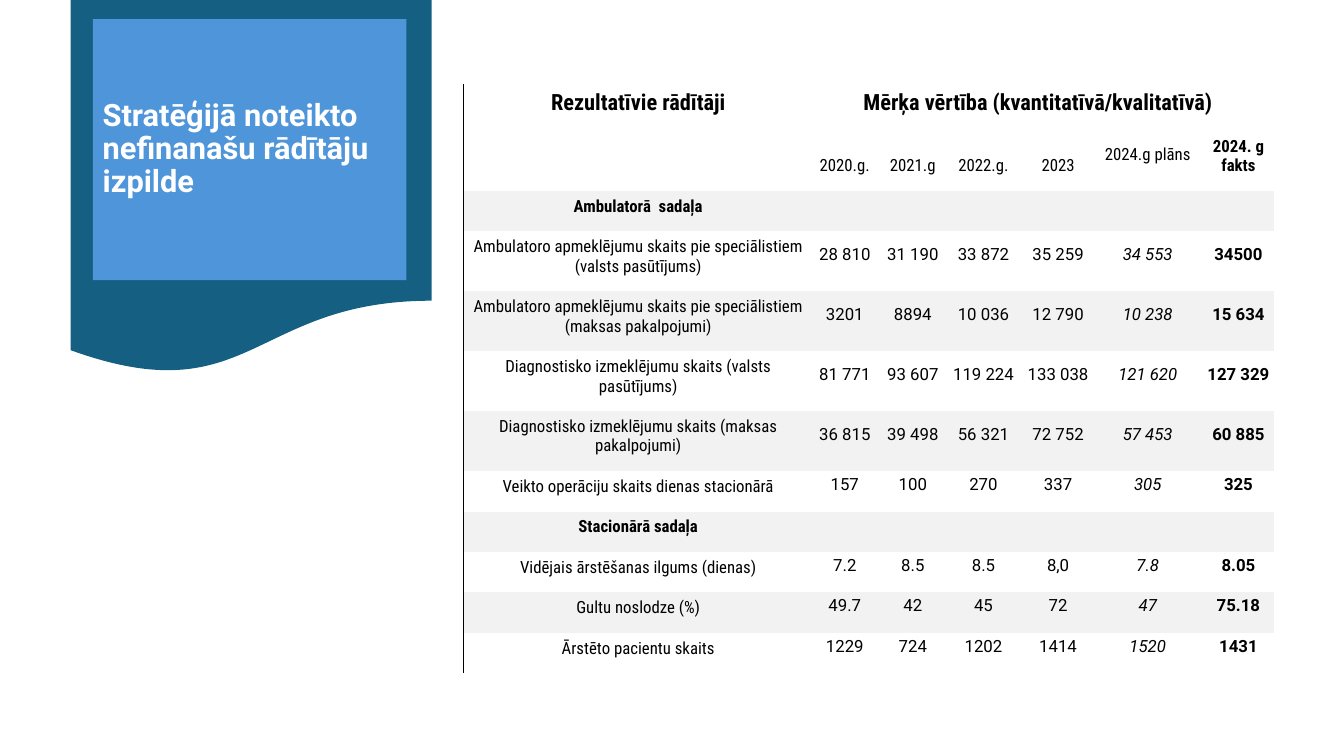
from lxml.etree import SubElement
from pptx import Presentation
from pptx.dml.color import RGBColor as RGB
from pptx.enum.shapes import MSO_SHAPE as SHAPE
from pptx.enum.text import MSO_ANCHOR as ANCHOR, PP_ALIGN as ALIGN
from pptx.oxml import parse_xml
from pptx.oxml.ns import nsdecls, qn
from pptx.util import Cm, Pt

COLORS = {"navy": "156082", "blue": "4E95D9", "band": "F2F2F2",
          "text": "000000", "white": "FFFFFF"}
BODY, NARROW = "Roboto", "Roboto Condensed"
NO_STYLE = "{2D5ABB26-0587-4C30-8999-92F81FD0307C}"
COLUMNS = [8.66, 1.75, 1.68, 1.88, 1.88, 2.64, 1.93]
SHORT, TALL = 1.02, 1.51
HEIGHTS = [1.19, TALL, SHORT] + [TALL] * 4 + [SHORT] * 5
PLAN, FACT = 5, 6
ROWS = [
    ["Rezultatīvie rādītāji", "Mērķa vērtība (kvantitatīvā/kvalitatīvā)"],
    ["", "2020.g.", "2021.g", "2022.g.", "2023", "2024.g plāns", "2024. g fakts"],
    ["Ambulatorā  sadaļa"],
    ["Ambulatoro apmeklējumu skaits pie speciālistiem (valsts pasūtījums)",
     "28 810", "31 190", "33 872", "35 259", "34 553", "34500"],
    ["Ambulatoro apmeklējumu skaits pie speciālistiem (maksas pakalpojumi)",
     "3201", "8894", "10 036", "12 790", "10 238", "15 634"],
    ["Diagnostisko izmeklējumu skaits (valsts pasūtījums)",
     "81 771", "93 607", "119 224", "133 038", "121 620", "127 329"],
    ["Diagnostisko izmeklējumu skaits (maksas pakalpojumi)",
     "36 815", "39 498", "56 321", "72 752", "57 453", "60 885"],
    ["Veikto operāciju skaits dienas stacionārā",
     "157", "100", "270", "337", "305", "325"],
    ["Stacionārā sadaļa"],
    ["Vidējais ārstēšanas ilgums (dienas)", "7.2", "8.5", "8.5", "8,0", "7.8", "8.05"],
    ["Gultu noslodze (%)", "49.7", "42", "45", "72", "47", "75.18"],
    ["Ārstēto pacientu skaits", "1229", "724", "1202", "1414", "1520", "1431"],
]


class SlideBuilder:
    """Draws styled shapes and tables on the current slide."""

    def __init__(self, slide):
        self.slide = slide

    def color(self, name):
        return RGB.from_string(COLORS[name])

    def style(self, p, size, font, color, bold=False, italic=False):
        for r in p.runs:
            f = r.font
            f.size, f.name, f.bold, f.italic = Pt(size), font, bold, italic
            f.color.rgb = self.color(color)

    def shape(self, kind, box, fill):
        sp = self.slide.shapes.add_shape(kind, *map(Cm, box))
        sp.shadow.inherit = False
        sp.fill.solid()
        sp.fill.fore_color.rgb = self.color(fill)
        sp.line.fill.background()
        return sp

    def title(self, text, box, fill):
        tf = self.shape(SHAPE.RECTANGLE, box, fill).text_frame
        tf.word_wrap = True
        tf.vertical_anchor = ANCHOR.MIDDLE
        tf.text = text
        p = tf.paragraphs[0]
        p.alignment = ALIGN.LEFT
        p.line_spacing = 0.9
        self.style(p, 22, BODY, "white", bold=True)

    def left_border(self, cell):
        cell._tc.get_or_add_tcPr().insert(0, parse_xml(
            f'<a:lnL {nsdecls("a")} w="9525"><a:solidFill>'
            f'<a:srgbClr val="{COLORS["text"]}"/></a:solidFill></a:lnL>'))

    def cell(self, cell, text, row, col):
        if row > 1 and row % 2 == 0:
            cell.fill.solid()
            cell.fill.fore_color.rgb = self.color("band")
        else:
            cell.fill.background()
        cell.margin_left, cell.margin_top = Cm(0.18), Cm(0.05)
        cell.margin_right = Cm(0.3 if (row, col) == (0, 1) else 0.03)
        cell.margin_bottom = Cm(0.38)
        value = row > 1 and col > 0
        middle = value or (row == 1 and col == PLAN)
        cell.vertical_anchor = ANCHOR.MIDDLE if middle else ANCHOR.BOTTOM
        p = cell.text_frame.paragraphs[0]
        p.alignment = ALIGN.CENTER
        if text:
            p.text = text
            heading = row == 0 or len(ROWS[row]) == 1
            self.style(p, 16 if row == 0 else 12, BODY if value else NARROW,
                       "text", heading or col == FACT, value and col == PLAN)
        else:
            SubElement(p._p, qn("a:endParaRPr")).set("sz", "1200")
        if col == 0:
            self.left_border(cell)

    def table(self, rows, left, top, widths, heights):
        frame = self.slide.shapes.add_table(
            len(heights), len(widths), Cm(left), Cm(top),
            Cm(sum(widths)), Cm(sum(heights)))
        tbl = frame.table
        tbl.first_row = tbl.horz_banding = False
        tbl._tbl.tblPr.find(qn("a:tableStyleId")).text = NO_STYLE
        for column, width in zip(tbl.columns, widths):
            column.width = Cm(width)
        for i, height in enumerate(heights):
            tbl.rows[i].height = Cm(height)
            for j in range(len(widths)):
                text = rows[i][j] if j < len(rows[i]) else ""
                self.cell(tbl.cell(i, j), text, i, j)
        tbl.cell(0, 1).merge(tbl.cell(0, len(widths) - 1))


def main():
    prs = Presentation()
    prs.slide_width, prs.slide_height = Cm(33.87), Cm(19.05)
    s = SlideBuilder(prs.slides.add_slide(prs.slide_layouts[6]))
    s.shape(SHAPE.FLOWCHART_DOCUMENT, (1.78, 0, 9.1, 9.45), "navy")
    s.title("Stratēģijā noteikto nefinanašu rādītāju izpilde",
            (2.34, 0.48, 7.9, 6.58), "blue")
    s.table(ROWS, 11.68, 2.11, COLUMNS, HEIGHTS)
    prs.save("out.pptx")


if __name__ == "__main__":
    main()
